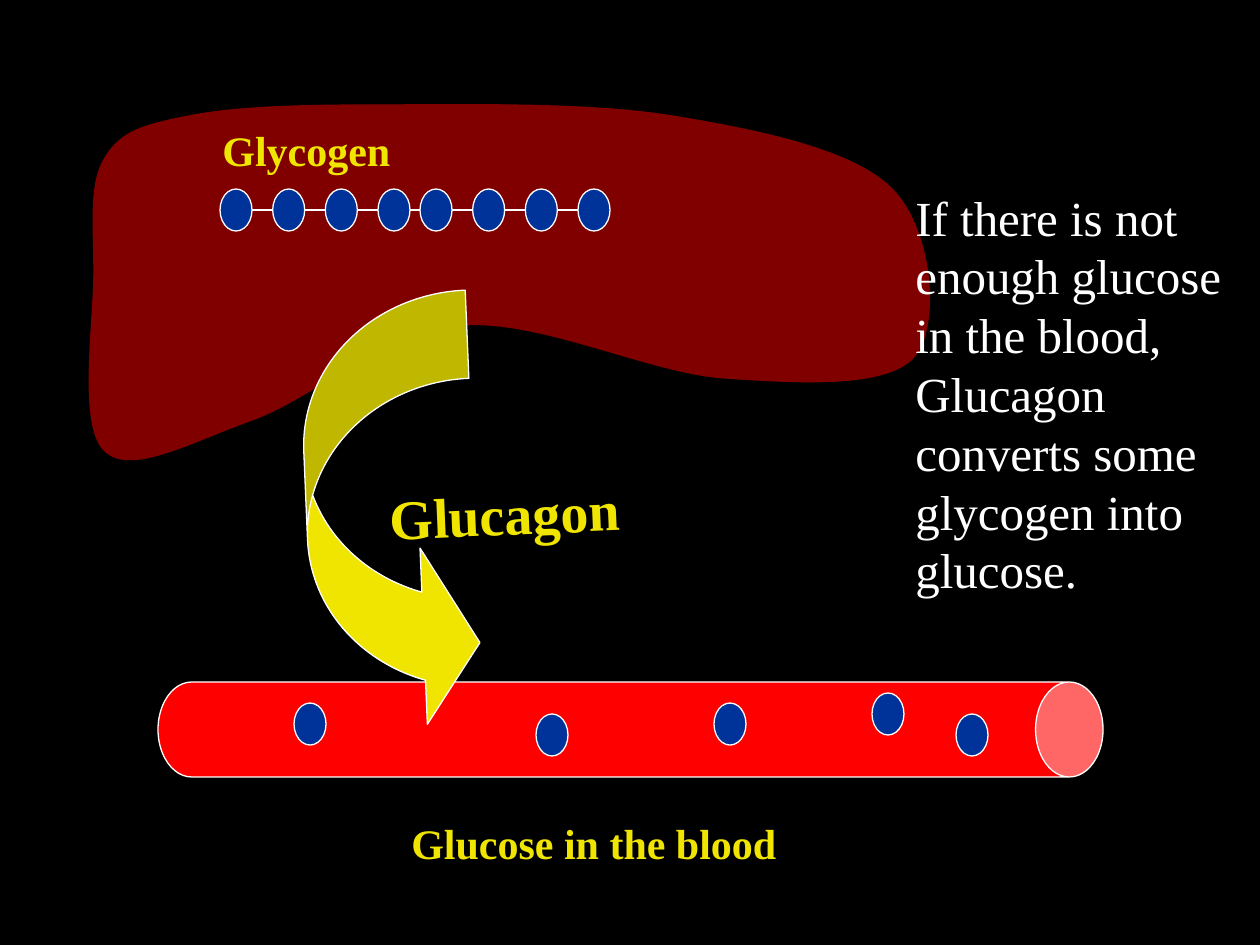
from lxml.etree import SubElement
from pptx import Presentation
from pptx.dml.color import RGBColor
from pptx.enum.shapes import MSO_CONNECTOR, MSO_SHAPE
from pptx.enum.text import MSO_ANCHOR, PP_ALIGN
from pptx.oxml.ns import qn
from pptx.util import Pt

SCALE = 914400 / 126
BEAD_WIDTH, BEAD_HEIGHT = 32, 42
YELLOW, WHITE, BLUE = "F0E500", "FFFFFF", "003399"
LIVER_START = (94, 273)
LIVER_CURVES = [
    [(94, 224), (89, 184), (105, 158)],
    [(121, 131), (144, 125), (189, 116)],
    [(234, 107), (297, 105), (378, 105)],
    [(459, 105), (586, 102), (672, 116)],
    [(757, 130), (852, 149), (892, 189)],
    [(932, 229), (941, 325), (914, 357)],
    [(886, 388), (800, 383), (725, 378)],
    [(649, 373), (541, 319), (462, 325)],
    [(383, 333), (311, 399), (252, 420)],
    [(193, 441), (131, 476), (105, 451)],
    [(78, 427), (94, 323), LIVER_START],
]
GLUCOSE_SPOTS = [(136, 21), (378, 32), (556, 21), (714, 11), (798, 32)]


def px(value):
    """Turn pixels into EMU."""
    return round(value * SCALE)


def colour(value):
    """Turn a hex string into a colour."""
    return RGBColor.from_string(value)


def paint(shape, fill, line=WHITE):
    """Give a shape a solid fill and a thin outline without shadow."""
    shape.shadow.inherit = False
    shape.fill.solid()
    shape.fill.fore_color.rgb = colour(fill)
    shape.line.color.rgb = colour(line)
    shape.line.width = Pt(0.75)


def add_preset(shapes, kind, box, fill, rotation=0, adjustments=()):
    """Add a painted preset shape."""
    shape = shapes.add_shape(kind, *map(px, box))
    for index, value in enumerate(adjustments):
        shape.adjustments[index] = value
    shape.rotation = rotation
    paint(shape, fill)
    return shape


def add_text(page, box, text, size=24, fill=YELLOW, bold=True,
             align=PP_ALIGN.LEFT, anchor=MSO_ANCHOR.TOP, rotation=0):
    """Add a wrapped text box with one paragraph."""
    label = page.shapes.add_textbox(*map(px, box))
    label.rotation = rotation
    frame = label.text_frame
    frame.word_wrap = True
    frame.vertical_anchor = anchor
    para = frame.paragraphs[0]
    para.alignment = align
    para.line_spacing = Pt(size * 1.2)
    span = para.add_run()
    span.text = text
    span.font.name = "Times New Roman"
    span.font.size = Pt(size)
    span.font.bold = bold
    span.font.color.rgb = colour(fill)


def add_bead(shapes, left, top):
    """Add one glucose molecule."""
    add_preset(shapes, MSO_SHAPE.OVAL, (left, top, BEAD_WIDTH, BEAD_HEIGHT), BLUE)


def add_chain(page, box, line_start, count=4):
    """Add a group of evenly spaced beads on a line."""
    left, top, width, height = box
    shapes = page.shapes.add_group_shape().shapes
    middle = px(top + height / 2)
    line = shapes.add_connector(MSO_CONNECTOR.STRAIGHT, px(left + line_start), middle,
                                px(left + width - BEAD_WIDTH), middle)
    line.line.color.rgb = colour(WHITE)
    line.line.width = Pt(0.75)
    SubElement(line._element.spPr, qn("a:effectLst"))
    pitch = (width - BEAD_WIDTH) / (count - 1)
    for index in range(count):
        add_bead(shapes, left + index * pitch, top)


def add_liver(page):
    """Add the liver as a closed outline of Bezier curves."""
    points = [point for curve in LIVER_CURVES for point in curve]
    builder = page.shapes.build_freeform(*LIVER_START, scale=SCALE)
    builder.add_line_segments(points, close=True)
    liver = builder.convert_to_shape()
    paint(liver, "800000", "800000")
    outline = next(liver._element.iter(qn("a:path")))
    steps = outline.findall(qn("a:lnTo"))
    close = outline.find(qn("a:close"))
    for first in range(0, len(points), 3):
        curve = SubElement(outline, qn("a:cubicBezTo"))
        for step in steps[first:first + 3]:
            curve.append(step[0])
    for step in steps:
        outline.remove(step)
    outline.append(close)


def add_vessel(page, box):
    """Add a lying blood vessel with its glucose."""
    left, top, width, height = box
    upright = (left + (width - height) / 2, top + (height - width) / 2, height, width)
    add_preset(page.shapes, MSO_SHAPE.CAN, upright, "FF0000", 90, [0.71])
    for across, down in GLUCOSE_SPOTS:
        add_bead(page.shapes, left + across, top + down)


def add_hormone(page, box):
    """Add the curved arrow and its tilted name."""
    left, top, width, height = box
    add_preset(page.shapes, MSO_SHAPE.CURVED_UP_ARROW, box, YELLOW, 87.6,
               [0.525, 1.05, 0.333])
    add_text(page, (left + 200, top + 43, 270, 80), "Glucagon", size=32,
             align=PP_ALIGN.CENTER, anchor=MSO_ANCHOR.MIDDLE, rotation=-2.4)


def main():
    """Build and save the deck."""
    deck = Presentation()
    deck.slide_width, deck.slide_height = px(1260), px(945)
    page = deck.slides.add_slide(deck.slide_layouts[6])
    page.background.fill.solid()
    page.background.fill.fore_color.rgb = colour("000000")
    add_liver(page)
    add_chain(page, (220, 189, 190, BEAD_HEIGHT), BEAD_WIDTH)
    add_chain(page, (420, 189, 190, BEAD_HEIGHT), -10)
    add_vessel(page, (158, 682, 945, 95))
    add_text(page, (903, 181, 357, 425),
             "If there is not enough glucose in the blood, Glucagon converts "
             "some glycogen into glucose.", size=28, fill=WHITE, bold=False)
    add_text(page, (210, 118, 273, 63), "Glycogen")
    add_hormone(page, (170, 430, 441, 168))
    add_text(page, (399, 811, 504, 63), "Glucose in the blood")
    deck.save("out.pptx")


if __name__ == "__main__":
    main()
